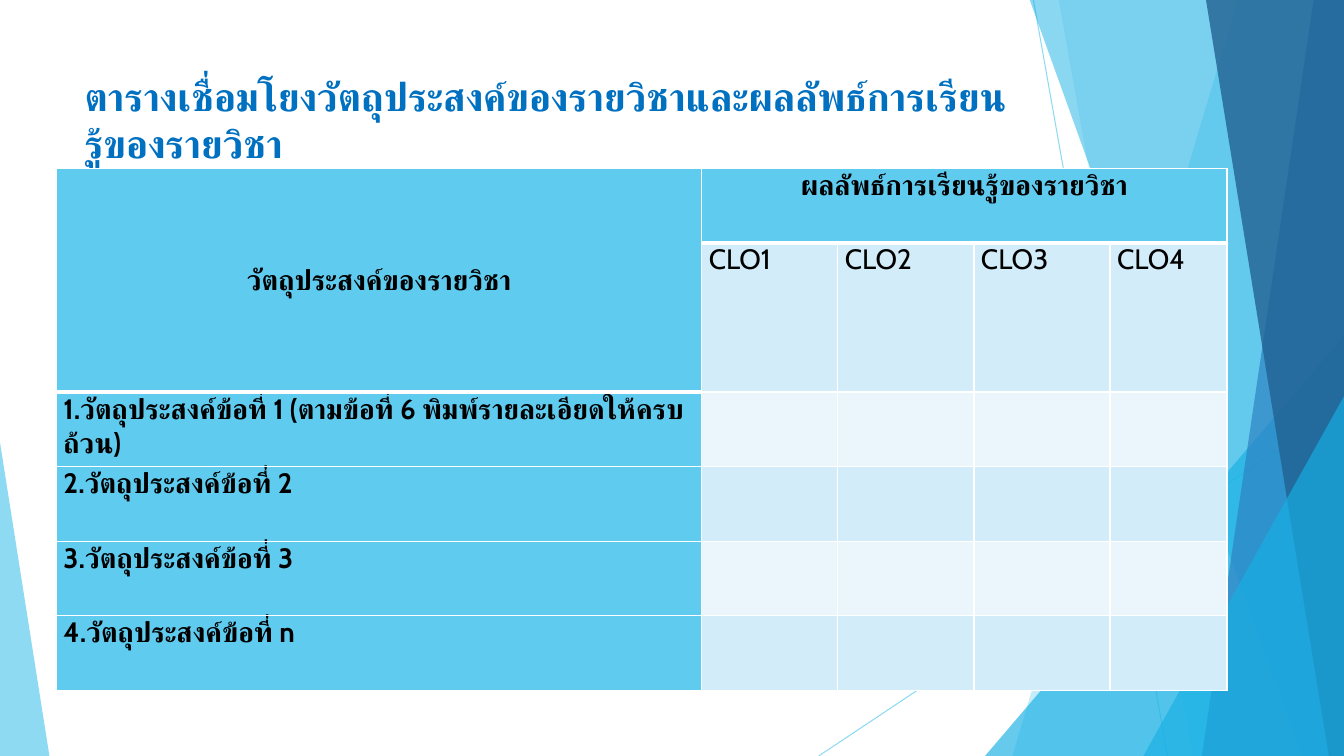
from dataclasses import dataclass

from lxml import etree
from pptx import Presentation
from pptx.dml.color import RGBColor
from pptx.enum.shapes import MSO_CONNECTOR, MSO_SHAPE
from pptx.enum.text import MSO_ANCHOR, PP_ALIGN
from pptx.oxml.ns import qn
from pptx.util import Emu, Pt

LINE = MSO_CONNECTOR.STRAIGHT
TRIANGLE = MSO_SHAPE.ISOSCELES_TRIANGLE
TOP, MIDDLE = MSO_ANCHOR.TOP, MSO_ANCHOR.MIDDLE
LEFT, CENTER = PP_ALIGN.LEFT, PP_ALIGN.CENTER
PX = 9144  # 100 px to the inch
WIDE, HIGH = 1333, 750


@dataclass(frozen=True)
class Theme:
    font: str = "Cabin"
    title: int = 28
    body: int = 20
    thin: int = 1
    thick: int = 3
    sky: str = "5FCBEF"
    aqua: str = "17B0E4"
    blue: str = "2E83C3"
    navy: str = "226292"
    head: str = "0070C0"
    ink: str = "000000"
    white: str = "FFFFFF"
    bands: tuple = ("EAF6FC", "D2ECF9")


THEME = Theme()


def px(n):
    return Emu(n * PX)


def rgb(code):
    return RGBColor.from_string(code)


def fade(shape, alpha):
    """Set the opacity, in percent, of the shape's colour."""
    tint = shape._element.spPr.find(".//" + qn("a:srgbClr"))
    etree.SubElement(tint, qn("a:alpha"), val=str(alpha * 1000))


def paint(shape, color, alpha):
    shape.shadow.inherit = False
    shape.fill.solid()
    shape.fill.fore_color.rgb = rgb(color)
    shape.line.fill.background()
    fade(shape, alpha)


def add_ray(slide, start, end):
    ray = slide.shapes.add_connector(LINE, *map(px, start + end))
    ray.line.color.rgb = rgb(THEME.sky)
    ray.line.width = Pt(0.75)
    fade(ray, 70)
    etree.SubElement(ray._element.spPr, qn("a:effectLst"))


def add_band(slide, top, right, foot, color, alpha):
    """Draw a full-height band from x = top to the right edge, down to x = foot."""
    pen = slide.shapes.build_freeform(top, -1, scale=PX)
    pen.add_line_segments([(right, -1), (right, HIGH), (foot, HIGH)], close=True)
    paint(pen.convert_to_shape(), color, alpha)


def add_wedge(slide, left, top, right, peak, color, alpha):
    """Draw a triangle standing on the bottom edge, its peak at 0 left or 1 right."""
    box = map(px, (left, top, right - left, HIGH - top))
    wedge = slide.shapes.add_shape(TRIANGLE, *box)
    wedge.adjustments[0] = peak
    paint(wedge, color, alpha)


def add_run(para, text, size, color, bold):
    run = para.add_run()
    run.text = text
    run.font.size = Pt(size)
    run.font.bold = bold
    run.font.name = THEME.font
    run.font.color.rgb = rgb(color)
    etree.SubElement(run.font._element, qn("a:cs"), typeface=THEME.font)


def add_title(slide, text):
    box = slide.shapes.add_textbox(px(74), px(67), px(940), px(117))
    frame = box.text_frame
    frame.word_wrap = True
    frame.vertical_anchor = TOP
    add_run(frame.paragraphs[0], text, THEME.title, THEME.head, True)


def add_edge(cell, side, width):
    edge = etree.SubElement(cell._tc.get_or_add_tcPr(), qn("a:ln" + side),
                            w=str(Pt(width)))
    fill = etree.SubElement(edge, qn("a:solidFill"))
    etree.SubElement(fill, qn("a:srgbClr"), val=THEME.white)


def style_cell(cell, row, col):
    head = row == 0 or (row == 1 and col == 0)
    sides = "LRTB" if row == 0 else "LRB"
    for side in sides:
        add_edge(cell, side, THEME.thick if head and side == "B" else THEME.thin)
    cell.fill.solid()
    label = row == 0 or col == 0
    cell.fill.fore_color.rgb = rgb(THEME.sky if label else THEME.bands[row % 2])
    cell.margin_left = cell.margin_right = px(7)
    cell.margin_top = cell.margin_bottom = 0
    cell.vertical_anchor = MIDDLE if (row, col) == (0, 0) else TOP


def add_grid(slide, left, top, cols, rows, texts):
    size = px(sum(cols)), px(sum(rows))
    grid = slide.shapes.add_table(len(rows), len(cols), px(left), px(top), *size).table
    for col, width in enumerate(cols):
        grid.columns[col].width = px(width)
    for row, height in enumerate(rows):
        grid.rows[row].height = px(height)
        for col in range(len(cols)):
            cell = grid.cell(row, col)
            style_cell(cell, row, col)
            text = texts.get((row, col))
            if text:
                para = cell.text_frame.paragraphs[0]
                para.alignment = CENTER if row == 0 else LEFT
                add_run(para, text, THEME.body, THEME.ink, row == 0 or col == 0)
    grid.cell(0, 0).merge(grid.cell(1, 0))
    grid.cell(0, 1).merge(grid.cell(0, len(cols) - 1))


def add_decor(slide):
    add_ray(slide, (1025, 0), (1158, HIGH))
    add_ray(slide, (WIDE, 403), (812, HIGH))
    add_band(slide, 1228, WIDE, 1004, THEME.sky, 36)
    add_band(slide, 1050, WIDE, 1183, THEME.sky, 20)
    add_wedge(slide, 977, 333, WIDE, 1, THEME.aqua, 66)
    add_band(slide, 1021, WIDE, 1291, THEME.aqua, 50)
    add_band(slide, 1303, WIDE, 1192, THEME.blue, 70)
    add_band(slide, 1196, WIDE, 1318, THEME.navy, 80)
    add_wedge(slide, 1134, 393, WIDE, 1, THEME.aqua, 66)
    add_wedge(slide, 0, 439, 49, 0, THEME.sky, 70)


def main():
    deck = Presentation()
    deck.slide_width, deck.slide_height = px(WIDE), px(HIGH)
    slide = deck.slides.add_slide(deck.slide_layouts[6])

    # Backdrop
    add_decor(slide)

    # Title
    add_title(slide, "ตารางเชื่อมโยงวัตถุประสงค์ของรายวิชาและผลลัพธ์การเรียนรู้ของรายวิชา")

    # Table of aims against outcomes
    texts = {(0, 0): "วัตถุประสงค์ของรายวิชา", (0, 1): "ผลลัพธ์การเรียนรู้ของรายวิชา"}
    for n in range(1, 5):
        texts[1, n] = f"CLO{n}"
    aims = ("1 (ตามข้อที่ 6 พิมพ์รายละเอียดให้ครบถ้วน)", "2", "3", "n")
    for n, aim in enumerate(aims, 1):
        texts[n + 1, 0] = f"{n}.วัตถุประสงค์ข้อที่ {aim}"
    add_grid(slide, 56, 167, [640] + [135] * 3 + [116], [74, 148] + [74] * 4, texts)

    deck.save("out.pptx")


if __name__ == "__main__":
    main()
